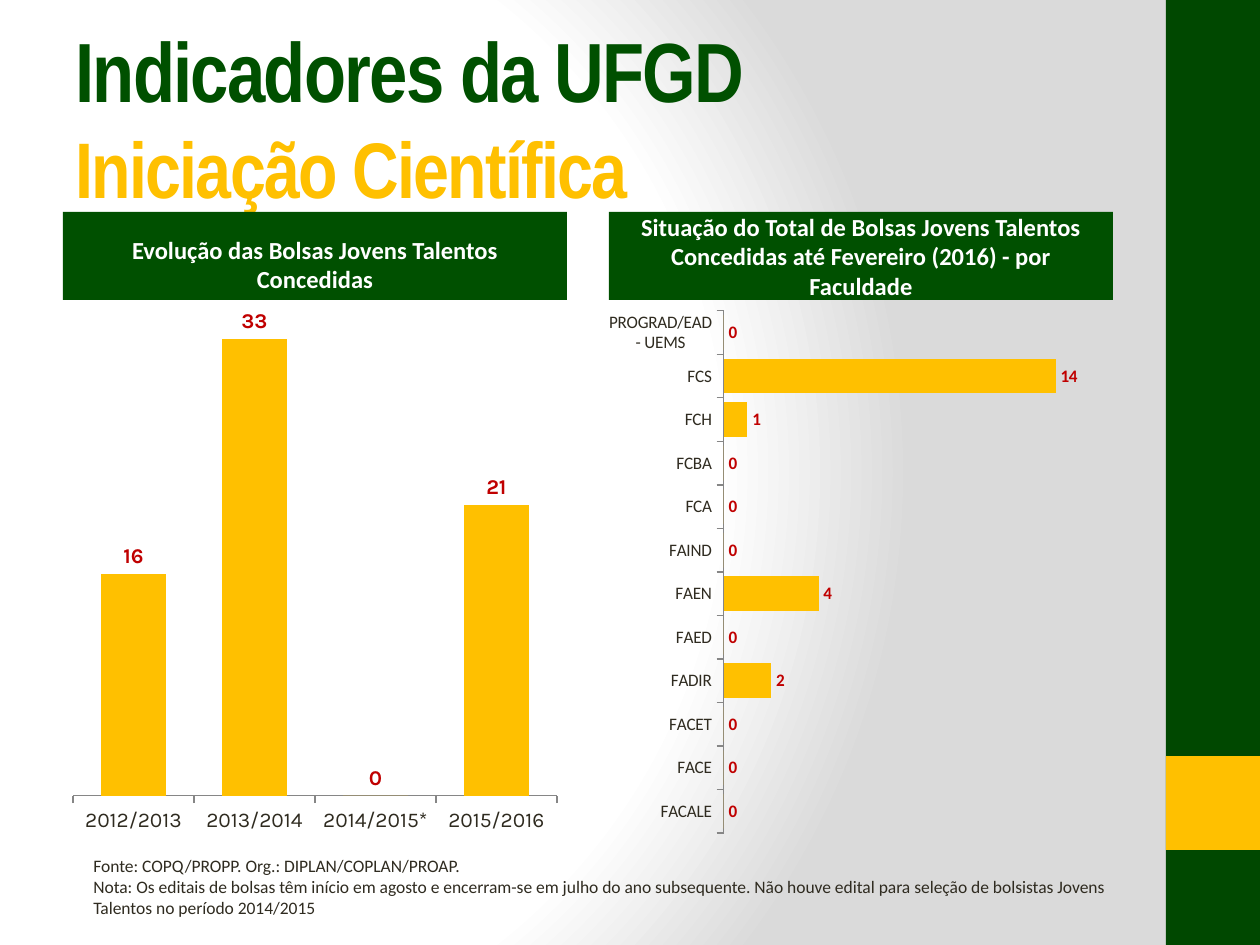
"""Build the slide on young-talent scholarships at UFGD."""
from lxml import etree
from pptx import Presentation
from pptx import util as u
from pptx.chart.data import CategoryChartData
from pptx.dml.color import RGBColor
from pptx.enum import chart as charts, shapes, text
from pptx.oxml import parse_xml
from pptx.oxml.ns import nsdecls, qn

PX = 914400 / 126
DARK_GREEN = RGBColor(0x00, 0x48, 0x00)
GREEN = RGBColor(0x00, 0x50, 0x00)
GOLD = RGBColor(0xFF, 0xC0, 0x00)
RED = RGBColor(0xC0, 0x00, 0x00)
INK = RGBColor(0x2F, 0x2B, 0x20)
GREY = RGBColor(0x86, 0x86, 0x86)
WHITE = RGBColor(0xFF, 0xFF, 0xFF)


def box(*lengths):
    return [u.Emu(round(length * PX)) for length in lengths]


def style(font, name, size, color, bold=False):
    font.name, font.size, font.bold = name, u.Pt(size), bold
    font.color.rgb = color


presentation = Presentation()
presentation.slide_width, presentation.slide_height = box(1260, 945)
slide = presentation.slides.add_slide(presentation.slide_layouts[6])

background = slide.background.fill
background.gradient()
gradient = slide.background._cSld.find(".//" + qn("a:gradFill"))
stops = "".join(
    f'<a:gs pos="{position}"><a:srgbClr val="{color}"/></a:gs>'
    for position, color in [(0, "FFFFFF"), (75000, "FFFFFF"), (100000, "DADADA")]
)
gradient.getparent().replace(gradient, parse_xml(
    f'<a:gradFill {nsdecls("a")} rotWithShape="1"><a:gsLst>{stops}</a:gsLst>'
    '<a:path path="circle"><a:fillToRect l="20000" t="50000" r="100000" b="50000"/>'
    '</a:path></a:gradFill>'))

for top, height, color in [(0, 945, DARK_GREEN), (756, 94, GOLD)]:
    shape = slide.shapes.add_shape(
        shapes.MSO_SHAPE.RECTANGLE, *box(1166, top, 94, height))
    shape.shadow.inherit = False
    shape.fill.solid()
    shape.fill.fore_color.rgb = color
    shape.line.fill.background()

title = slide.shapes.add_textbox(*box(63, 38, 1050, 157)).text_frame
title.word_wrap = True
title.vertical_anchor = text.MSO_ANCHOR.MIDDLE
title.text = "Indicadores da UFGD\vIniciação Científica"
for run, size, color in zip(title.paragraphs[0].runs, (48, 45), (GREEN, GOLD)):
    style(run.font, "Arial Narrow", size, color, True)
    run.font._element.set("spc", "-100")

faculties = ["FACALE", "FACE", "FACET", "FADIR", "FAED", "FAEN", "FAIND",
             "FCA", "FCBA", "FCH", "FCS", "PROGRAD/EAD - UEMS"]
panels = [
    (63, "Evolução das Bolsas Jovens Talentos Concedidas", text.MSO_ANCHOR.BOTTOM,
     charts.XL_CHART_TYPE.COLUMN_CLUSTERED,
     ["2012/2013", "2013/2014", "2014/2015*", "2015/2016"], [16, 33, 0, 21],
     87, 35, "Karla", 12),
    (609, "Situação do Total de Bolsas Jovens Talentos Concedidas até "
     "Fevereiro (2016) - por Faculdade", text.MSO_ANCHOR.MIDDLE,
     charts.XL_CHART_TYPE.BAR_CLUSTERED,
     faculties, [0, 0, 0, 2, 0, 4, 0, 0, 0, 1, 14, 0],
     25, 16, "Calibri", 10),
]
for left, heading, anchor, kind, categories, values, gap, top_value, name, size in panels:
    header = slide.shapes.add_shape(
        shapes.MSO_SHAPE.RECTANGLE, *box(left, 212, 504, 88))
    header.shadow.inherit = False
    header.fill.solid()
    header.fill.fore_color.rgb = GREEN
    header.line.fill.background()
    header.text_frame.vertical_anchor = anchor
    header.text_frame.text = heading
    paragraph = header.text_frame.paragraphs[0]
    paragraph.alignment = text.PP_ALIGN.CENTER
    style(paragraph.runs[0].font, "Calibri", 14, WHITE, True)

    data = CategoryChartData()
    data.categories = categories
    data.add_series("Series 1", values)
    chart = slide.shapes.add_chart(kind, *box(left, 300, 504, 544), data).chart
    style(chart.font, "Calibri", 10, INK)
    chart.has_legend = False
    chart.has_title = False

    value_axis = chart.value_axis
    value_axis.visible = False
    value_axis.has_major_gridlines = False
    value_axis.minimum_scale, value_axis.maximum_scale = 0, top_value
    category_axis = chart.category_axis
    category_axis.major_tick_mark = charts.XL_TICK_MARK.OUTSIDE
    category_axis.format.line.color.rgb = GREY
    style(category_axis.tick_labels.font, name, size, INK)

    plot = chart.plots[0]
    plot.gap_width = gap
    plot.vary_by_categories = False
    series = plot.series[0]
    series.format.fill.solid()
    series.format.fill.fore_color.rgb = GOLD
    labels = series.data_labels
    labels.show_value = True
    labels.position = charts.XL_LABEL_POSITION.OUTSIDE_END
    style(labels.font, name, size, RED, True)

notes = slide.shapes.add_textbox(*box(81, 849, 1056, 77)).text_frame
notes.word_wrap = True
notes.text = (
    "Fonte: COPQ/PROPP. Org.: DIPLAN/COPLAN/PROAP.\n"
    "Nota: Os editais de bolsas têm início em agosto e encerram-se em julho do ano "
    "subsequente. Não houve edital para seleção de bolsistas Jovens Talentos no "
    "período 2014/2015")
for paragraph in notes.paragraphs:
    style(paragraph.runs[0].font, "Calibri", 10, INK)

presentation.save("out.pptx")
